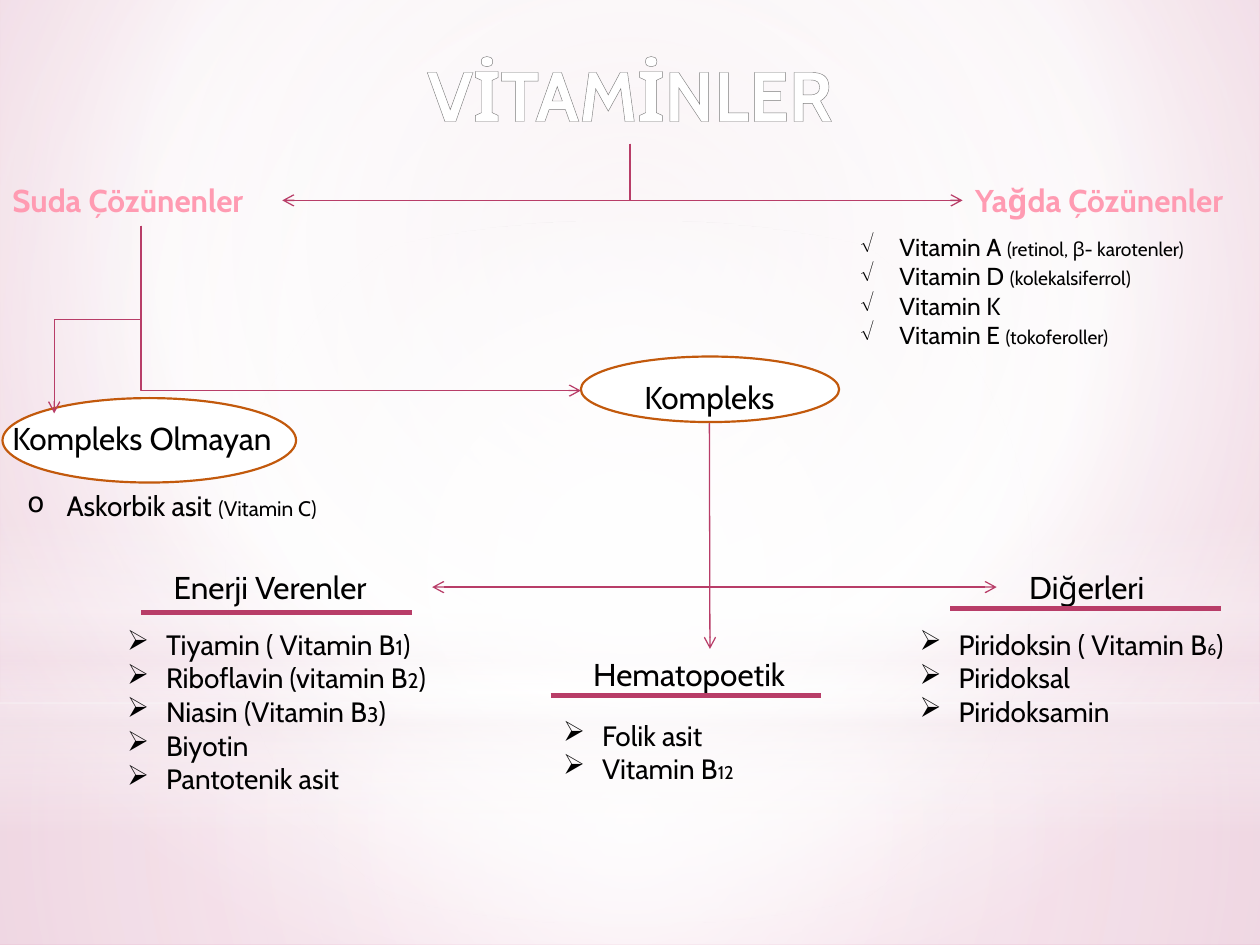
from lxml.etree import SubElement as Sub
from pptx import Presentation
from pptx.dml.color import RGBColor
from pptx.enum.shapes import MSO_CONNECTOR as Link, MSO_SHAPE as Form
from pptx.enum.text import MSO_AUTO_SIZE as Fit, PP_ALIGN as Align
from pptx.oxml import parse_xml
from pptx.oxml.ns import nsdecls, qn
from pptx.util import Inches, Pt

WIDE, HIGH = Inches(10), Inches(7.5)
ROSE, RUST, BLACK, WHITE = "B83D68", "C2590C", "000000", "FFFFFF"
MIDDLE = (50, 50, 50, 50)
SILVER = [(0, WHITE), (9, WHITE), (50, "7F7F7F"), (79, WHITE), (100, WHITE)]
PINK = [(0, "F8BDCA"), (9, "FF9BB2"), (50, "7A002B"), (79, "FF9BB2"),
        (100, "F8BDCA")]


def grid(*spots):
    """Turn x, y, x, y ... on a grid of 100 columns and 75 rows into lengths."""
    return [int(n * (HIGH / 75 if i % 2 else WIDE / 100))
            for i, n in enumerate(spots)]


def tint(code):
    return RGBColor.from_string(code)


def blend(fill, host, stops, focus=None):
    """Put a gradient in host: round a focus, or else from top to bottom."""
    fill.solid()
    grad = parse_xml(f'<a:gradFill {nsdecls("a")} rotWithShape="1"/>')
    marks = Sub(grad, qn("a:gsLst"))
    for spot, code, *alpha in stops:
        stop = Sub(marks, qn("a:gs"), pos=str(spot * 1000))
        color = Sub(stop, qn("a:srgbClr"), val=code)
        if alpha:
            Sub(color, qn("a:alpha"), val=str(alpha[0] * 1000))
    if focus:
        way = Sub(grad, qn("a:path"), path="circle")
        sides = {k: str(v * 1000) for k, v in zip("ltrb", focus)}
        Sub(way, qn("a:fillToRect"), **sides)
    else:
        Sub(grad, qn("a:lin"), ang="5400000", scaled="0")
    host.replace(host.find(qn("a:solidFill")), grad)


def form(slide, kind, box):
    shape = slide.shapes.add_shape(kind, *grid(*box))
    shape.shadow.inherit = False
    shape.line.fill.background()
    return shape


def glow(slide, kind, box, stops, focus=None):
    shape = form(slide, kind, box)
    blend(shape.fill, shape.element.spPr, stops, focus)


def oval(slide, box):
    shape = form(slide, Form.OVAL, box)
    shape.fill.solid()
    shape.fill.fore_color.rgb = tint(WHITE)
    shape.line.color.rgb = tint(RUST)
    shape.line.width = Pt(1.25)


def line(slide, start, end, width=0.75, arrow=True):
    link = slide.shapes.add_connector(Link.STRAIGHT, *grid(*start, *end))
    link.line.color.rgb = tint(ROSE)
    link.line.width = Pt(width)
    if arrow:
        Sub(link.line._get_or_add_ln(), qn("a:tailEnd"), type="arrow")
    Sub(link.element.spPr, qn("a:effectLst"))
    return link


def elbow(slide, start, end, bends=1):
    """Draw an arrow that leaves start downwards and turns towards end."""
    link = line(slide, start, end)
    (x1, y1), (x2, y2) = start, end
    long, wide = y2 - y1, abs(x2 - x1)
    box = ((x1 + x2 - long) / 2, (y1 + y2 - wide) / 2, long, wide)
    frame = link.element.spPr.find(qn("a:xfrm"))
    for flip in ("flipH", "flipV"):
        frame.attrib.pop(flip, None)
    link.left, link.top, link.width, link.height = grid(*box)
    frame.set("rot", "5400000" if x2 < x1 else "16200000")
    if x2 > x1:
        frame.set("flipH", "1")
    geom = link.element.spPr.find(qn("a:prstGeom"))
    geom.set("prst", f"bentConnector{bends + 1}")


def write(para, text, size, code=BLACK):
    run = para.add_run()
    run.text = text
    run.font.name = "Cabin"
    run.font.size = Pt(size)
    run.font.color.rgb = tint(code)
    return run


def frame(slide, box):
    shape = slide.shapes.add_textbox(*grid(*box))
    shape.text_frame.word_wrap = True
    shape.text_frame.auto_size = Fit.SHAPE_TO_FIT_TEXT
    return shape


def label(slide, box, text, align=None):
    shape = frame(slide, box)
    para = shape.text_frame.paragraphs[0]
    para.alignment = align
    write(para, text, 18)
    return shape


def banner(slide, box, text, size, stops, edge, align=None):
    """Write bold text with a gradient and an outline."""
    para = frame(slide, box).text_frame.paragraphs[0]
    para.alignment = align
    run = write(para, text, size)
    run.font.bold = True
    props = run._r.get_or_add_rPr()
    blend(run.font.fill, props, stops)
    props.insert(0, parse_xml(
        f'<a:ln {nsdecls("a")} w="{Pt(0.83)}"><a:solidFill>'
        f'<a:srgbClr val="{edge}"/></a:solidFill></a:ln>'))


def bullets(slide, box, sign, size, small, items):
    """List items; each is a name, a small part and a tail."""
    body = frame(slide, box).text_frame
    for i, item in enumerate(items):
        para = body.add_paragraph() if i else body.paragraphs[0]
        props = para._p.get_or_add_pPr()
        props.set("marL", str(Inches(0.31)))
        props.set("indent", str(-Inches(0.31)))
        Sub(props, qn("a:buChar"), char=sign)
        for text, points in zip(item, (size, small, size)):
            write(para, text, points)


def backdrop(slide):
    back = slide.background.fill
    back.solid()
    host = slide.element.find(".//" + qn("p:bgPr"))
    blend(back, host, [(0, "EDDAE2"), (60, WHITE), (100, "E09DBC")],
          (20, 10, 20, 60))
    haze = "F4E7ED"
    glow(slide, Form.RECTANGLE, (0, 55.8, 100, 19.2),
         [(0, WHITE, 91), (37, WHITE, 76), (100, haze, 79)], MIDDLE)
    glow(slide, Form.RECTANGLE, (0, 0, 100, 55.8),
         [(0, WHITE, 89), (48, WHITE, 62), (100, haze, 79)], MIDDLE)
    glow(slide, Form.RECTANGLE, (0, 41.2, 100, 25),
         [(0, WHITE, 0), (29, WHITE, 30), (45, haze, 40), (55, WHITE, 26),
          (65, haze, 60), (100, WHITE, 0)])
    glow(slide, Form.OVAL, (0, 17.5, 100, 55.8),
         [(0, WHITE), (56, WHITE, 0)], MIDDLE)


def main():
    deck = Presentation()
    deck.slide_width, deck.slide_height = WIDE, HIGH
    slide = deck.slides.add_slide(deck.slide_layouts[6])
    backdrop(slide)
    oval(slide, (0.2, 31.6, 23.3, 6.7))
    oval(slide, (46.1, 28.3, 20.5, 5.2))

    banner(slide, (31.1, 3.6, 37.8, 7.7), "VİTAMİNLER", 40, SILVER, "7D7D7D",
           Align.CENTER)
    banner(slide, (0, 13.9, 22.4, 4), "Suda Çözünenler", 18, PINK, "B43461")
    banner(slide, (76.4, 13.9, 26.4, 4), "Yağda Çözünenler", 18, PINK,
           "B43461")

    title, water, group = (50, 11.4), (11.2, 17.9), (56.3, 33.6)
    for start, end in ((title, (22.4, 15.9)), (title, (76.4, 15.9)),
                       (water, (46.1, 31)), (group, (34.3, 46.6)),
                       (group, (79.1, 46.6))):
        elbow(slide, start, end)
    elbow(slide, water, (4.3, 32.8), bends=2)

    label(slide, (0, 32.8, 25.6, 4), "Kompleks Olmayan")
    label(slide, (43.7, 29.5, 25.2, 4), "Kompleks", Align.CENTER)
    label(slide, (12.8, 44.6, 21.5, 4), "Enerji Verenler")
    label(slide, (80.7, 44.6, 17.3, 4), "Diğerleri")
    blood = label(slide, (46.1, 51.5, 20.5, 4), "Hematopoetik")
    line(slide, group, (56.3, 51.5)).end_connect(blood, 0)
    for x, y in ((11.2, 48.6), (75.4, 48.3), (43.7, 55.2)):
        line(slide, (x, y), (x + 21.5, y), 3, arrow=False)

    bullets(slide, (67.3, 17.9, 30.7, 10.4), "√", 14, 11, [
        ("Vitamin A ", "(retinol, β- karotenler)"),
        ("Vitamin D ", "(kolekalsiferrol)"),
        ("Vitamin K",),
        ("Vitamin E ", "(tokoferoller)")])
    bullets(slide, (1.2, 38.3, 35, 3.7), "o", 16, 12,
            [("Askorbik asit ", "(Vitamin C)")])
    bullets(slide, (9.1, 49.3, 29.1, 14.5), "➢", 16, 12, [
        ("Tiyamin ( Vitamin B", "1", ")"),
        ("Riboflavin (vitamin B", "2", ")"),
        ("Niasin (Vitamin B", "3", ")"),
        ("Biyotin",),
        ("Pantotenik asit",)])
    bullets(slide, (43.7, 56.5, 29.1, 6.4), "➢", 16, 10.5,
            [("Folik asit",), ("Vitamin B", "12")])
    bullets(slide, (72, 49.3, 29.1, 9.1), "➢", 16, 9, [
        ("Piridoksin ( Vitamin B", "6", ")"),
        ("Piridoksal",),
        ("Piridoksamin",)])
    deck.save("out.pptx")


if __name__ == "__main__":
    main()
